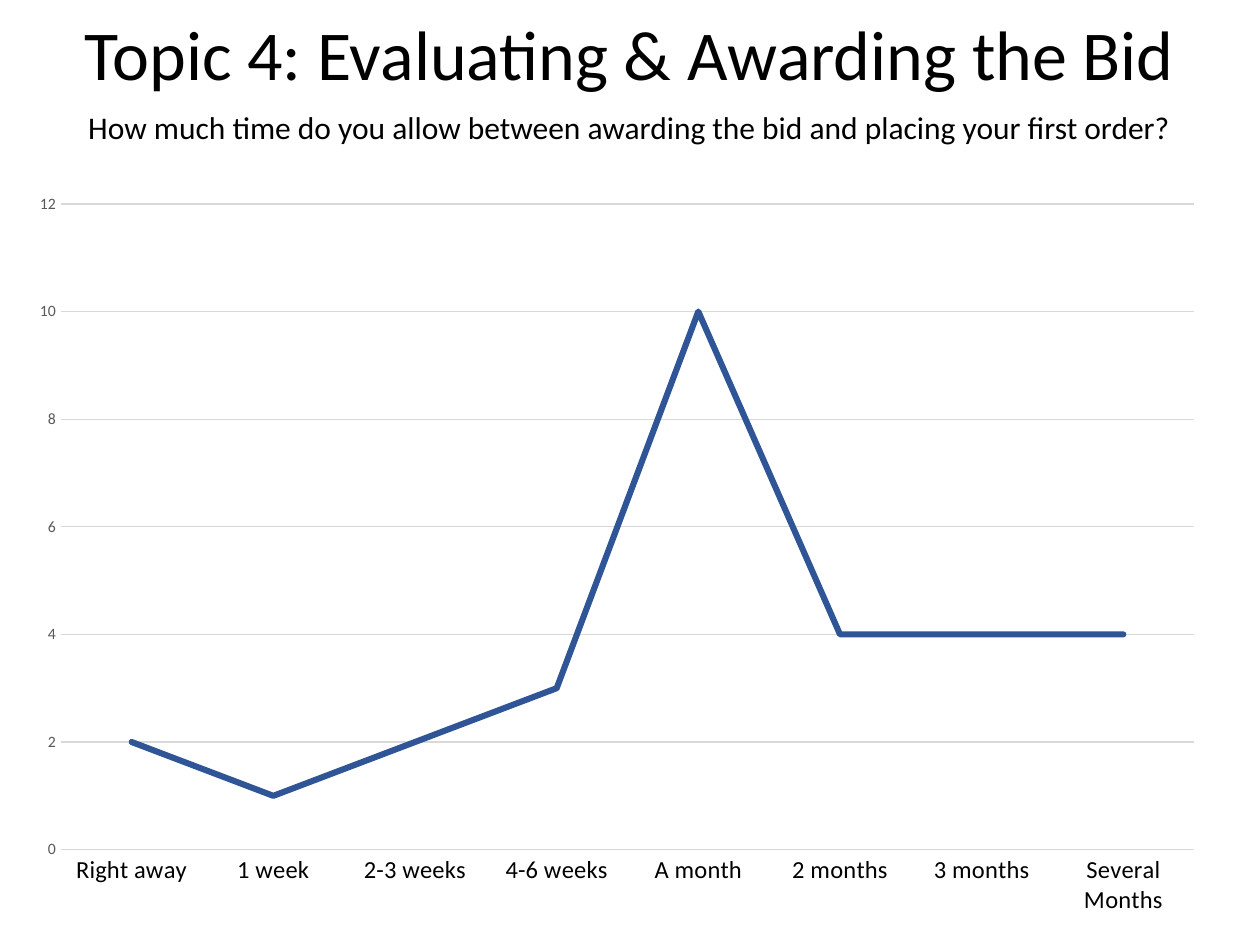
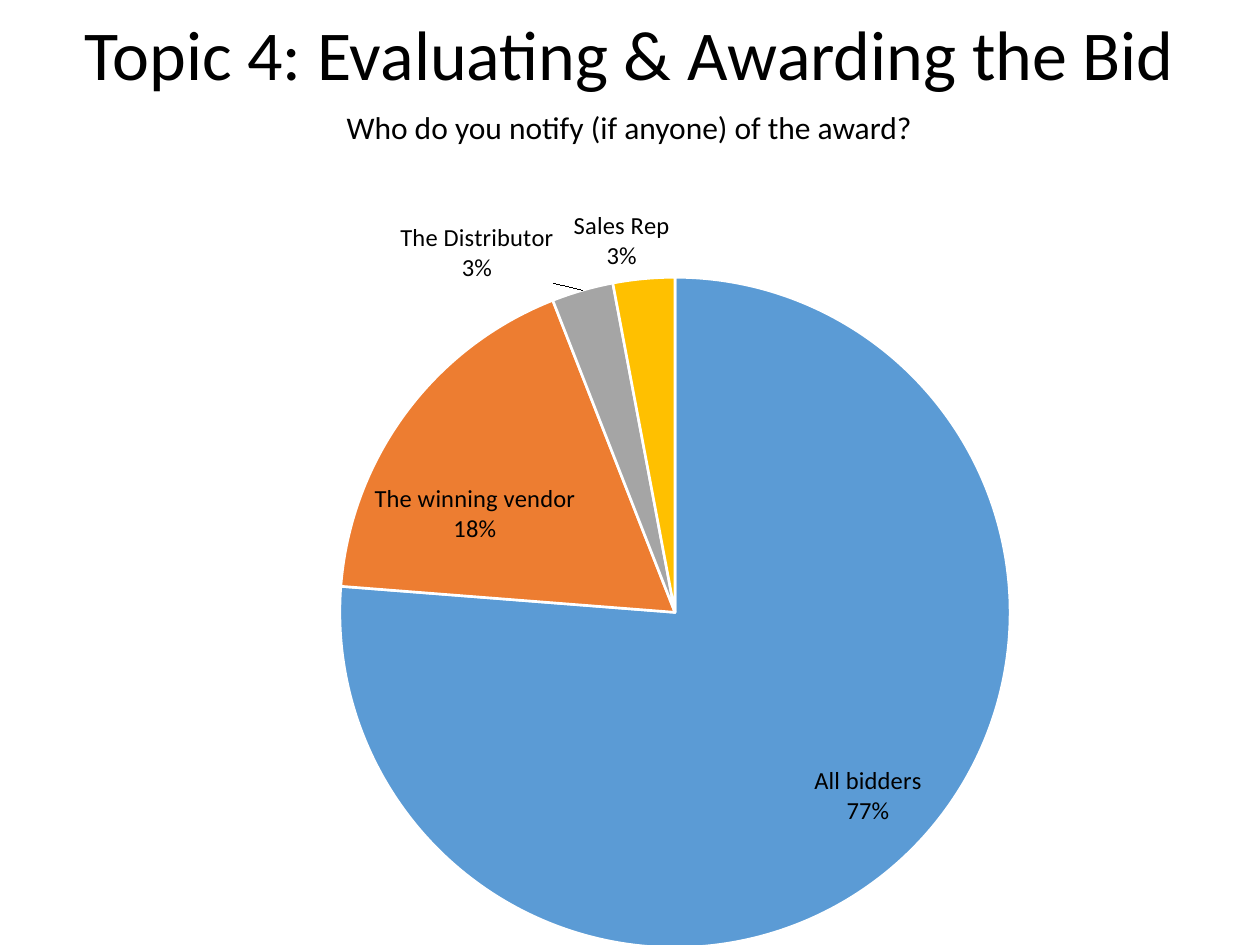
import pptx
import pptx.chart.data
import pptx.dml.color
import pptx.enum.chart
import pptx.enum.text
import pptx.oxml
import pptx.oxml.ns
import pptx.util
from pptx.util import Inches

FONT = "Calibri"
TITLE = "Topic 4: Evaluating & Awarding the Bid"
COLORS = {
    "text": "000000", "muted": "595959", "grid": "D9D9D9", "line": "2F5597",
    "white": "FFFFFF", "blue": "5B9BD5", "orange": "ED7D31",
    "gray": "A5A5A5", "gold": "FFC000",
}

# Boxes in inches: left, top, width, height
TITLE_BOX = (0.1, 0, 9.79, 0.81)
QUESTION_BOX = (0.1, 0.81, 9.79, 0.4)


def rgb(name):
    return pptx.dml.color.RGBColor.from_string(COLORS[name])


def style_font(font, size, color="text"):
    font.name = FONT
    font.size = pptx.util.Pt(size)
    font.color.rgb = rgb(color)


def style_line(line, color, width):
    line.color.rgb = rgb(color)
    line.width = pptx.util.Pt(width)


def add_text(slide, box, text, size, anchor, auto_size, spacing):
    shape = slide.shapes.add_textbox(*map(Inches, box))
    text_frame = shape.text_frame
    text_frame.word_wrap = True
    text_frame.auto_size = auto_size
    text_frame.vertical_anchor = anchor
    text_frame.text = text
    paragraph = text_frame.paragraphs[0]
    paragraph.alignment = pptx.enum.text.PP_ALIGN.CENTER
    paragraph.line_spacing = spacing
    style_font(paragraph.runs[0].font, size)


def add_topic_slide(presentation, question):
    """Blank slide with the shared title and its question."""
    anchors = pptx.enum.text.MSO_ANCHOR
    sizing = pptx.enum.text.MSO_AUTO_SIZE
    slide = presentation.slides.add_slide(presentation.slide_layouts[6])
    add_text(slide, TITLE_BOX, TITLE, 40, anchors.BOTTOM, sizing.NONE, 0.9)
    add_text(slide, QUESTION_BOX, question, 18, anchors.TOP,
             sizing.SHAPE_TO_FIT_TEXT, 1.0)
    return slide


def add_chart(slide, box, chart_type, values_by_category):
    data = pptx.chart.data.CategoryChartData()
    data.categories = list(values_by_category)
    data.add_series("Series 1", list(values_by_category.values()))
    chart = slide.shapes.add_chart(chart_type, *map(Inches, box), data).chart
    chart.has_title = False
    chart.has_legend = False
    style_font(chart.font, 10)
    return chart


def place_plot(chart, fractions):
    """Fix the inner plot area as x, y, w, h fractions of the chart."""
    plot_area = chart._chartSpace.chart.plotArea
    for layout in plot_area.findall(pptx.oxml.ns.qn("c:layout")):
        plot_area.remove(layout)
    modes = '<c:xMode val="edge"/><c:yMode val="edge"/>'
    sizes = "".join(f'<c:{key} val="{value}"/>'
                    for key, value in zip("xywh", fractions))
    plot_area.insert(0, pptx.oxml.parse_xml(
        f'<c:layout {pptx.oxml.ns.nsdecls("c")}><c:manualLayout>'
        f'<c:layoutTarget val="inner"/>{modes}{sizes}'
        '</c:manualLayout></c:layout>'))


def add_time_chart(slide, box, values_by_category):
    chart = add_chart(slide, box, pptx.enum.chart.XL_CHART_TYPE.LINE,
                      values_by_category)
    place_plot(chart, (0.04, 0.03, 0.94, 0.86))

    # Axes
    no_tick = pptx.enum.chart.XL_TICK_MARK.NONE
    for axis, size, color in ((chart.category_axis, 14, "text"),
                              (chart.value_axis, 9, "muted")):
        axis.major_tick_mark = axis.minor_tick_mark = no_tick
        style_font(axis.tick_labels.font, size, color)
    style_line(chart.category_axis.format.line, "grid", 0.75)
    value_axis = chart.value_axis
    value_axis.minimum_scale, value_axis.maximum_scale = 0, 12
    value_axis.major_unit = 2
    value_axis.format.line.fill.background()
    value_axis.has_major_gridlines = True
    style_line(value_axis.major_gridlines.format.line, "grid", 0.75)

    # Rounded line without markers
    chart.plots[0].vary_by_categories = False
    series = chart.plots[0].series[0]
    series.smooth = False
    series.marker.style = pptx.enum.chart.XL_MARKER_STYLE.NONE
    style_line(series.format.line, "line", 3.5)
    series._element.spPr.find(pptx.oxml.ns.qn("a:ln")).set("cap", "rnd")


def add_notice_chart(slide, box, values_by_category, slice_colors):
    chart = add_chart(slide, box, pptx.enum.chart.XL_CHART_TYPE.PIE,
                      values_by_category)
    place_plot(chart, (0.21, 0.11, 0.67, 0.87))
    plot = chart.plots[0]
    plot.vary_by_categories = True

    # Slices
    for index, color in enumerate(slice_colors):
        point_format = plot.series[0].points[index].format
        point_format.fill.solid()
        point_format.fill.fore_color.rgb = rgb(color)
        style_line(point_format.line, "white", 1.5)

    # Labels: category above its share
    labels = plot.series[0].data_labels
    labels.show_category_name = True
    labels.show_value = True
    labels.number_format = '0"%"'
    labels.number_format_is_linked = False
    labels.position = pptx.enum.chart.XL_LABEL_POSITION.BEST_FIT
    style_font(labels.font, 14)
    separator = pptx.oxml.parse_xml(
        f'<c:separator {pptx.oxml.ns.nsdecls("c")}>\n</c:separator>')
    labels._element.find(pptx.oxml.ns.qn("c:showBubbleSize")).addnext(separator)


def main():
    presentation = pptx.Presentation()
    presentation.slide_width = Inches(10)
    presentation.slide_height = Inches(7.5)

    slide = add_topic_slide(
        presentation,
        "How much time do you allow between awarding the bid "
        "and placing your first order?")
    add_time_chart(slide, (0.1, 1.44, 9.57, 5.96), {
        "Right away": 2, "1 week": 1, "2-3 weeks": 2, "4-6 weeks": 3,
        "A month": 10, "2 months": 4, "3 months": 4, "Several Months": 4})

    slide = add_topic_slide(
        presentation, "Who do you notify (if anyone) of the award?")
    add_notice_chart(slide, (1.03, 1.52, 7.94, 6.13), {
        "All bidders": 77, "The winning vendor": 18,
        "The Distributor": 3, "Sales Rep": 3},
        ("blue", "orange", "gray", "gold"))

    presentation.save("out.pptx")


if __name__ == "__main__":
    main()
